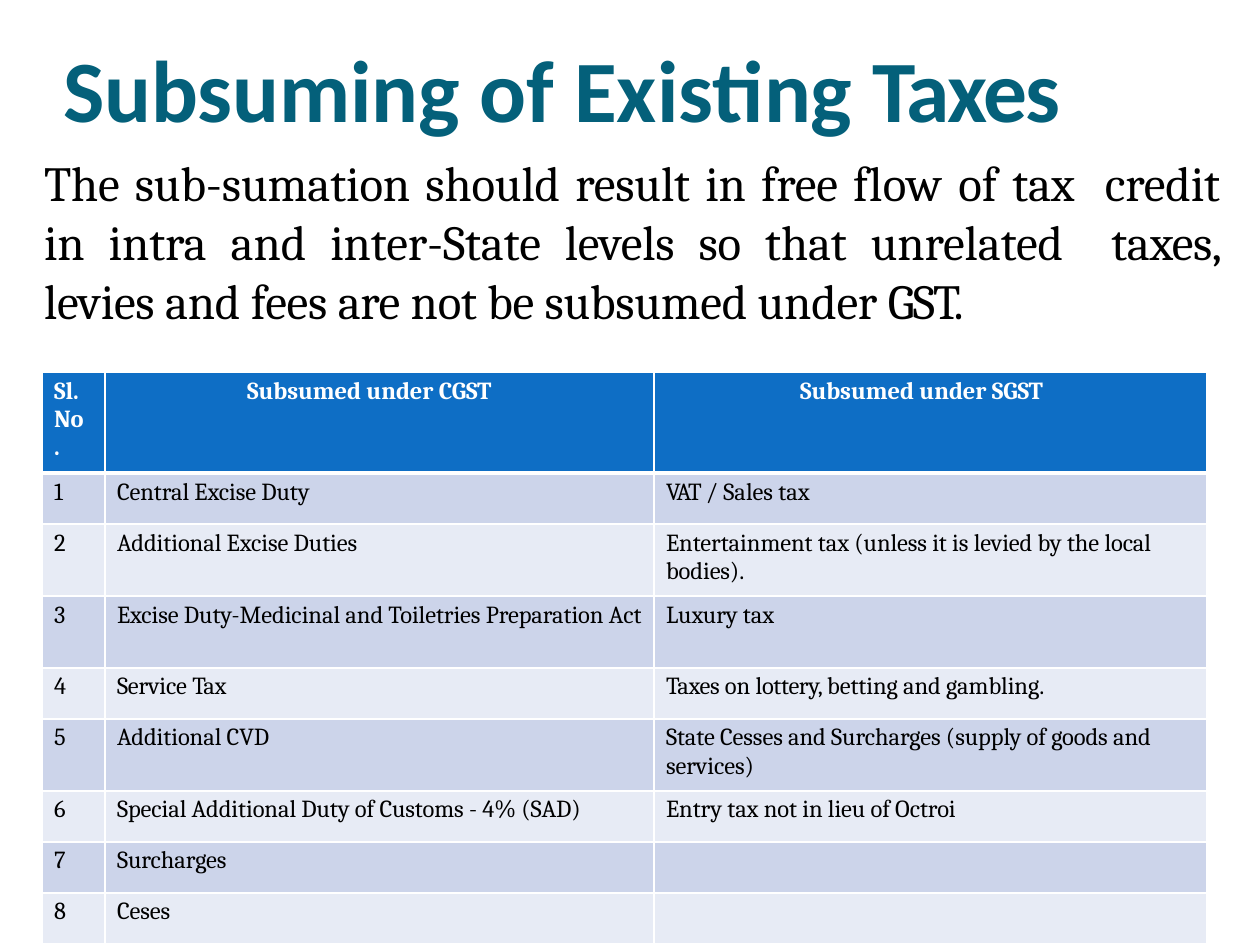
from pptx import Presentation, util as u
from pptx.dml.color import RGBColor
from pptx.enum import text
from pptx.oxml import parse_xml
from pptx.oxml.ns import nsdecls

WHITE, BLACK, TEAL, BLUE = "FFFFFF", "000000", "04607A", "0E6EC5"
BANDS = ["CCD4EA", "E7EBF5"]
TITLE = {"size": u.Pt(50), "name": "Calibri", "bold": True}
BODY = {"size": u.Pt(28), "name": "Cambria", "bold": False}
HEAD = {"size": u.Pt(14), "name": "Cambria", "bold": True}
CELL = {**HEAD, "bold": False}

COLUMNS = [63, 549, 553]
HEIGHTS = [101, 51, 72, 72, 51, 72, 51, 51, 51]
HEADERS = [["Sl. No", "."], ["Subsumed under CGST"], ["Subsumed under SGST"]]
HEADER_INDENTS = [12, 142, 146]
TAXES = [
    ("Central Excise Duty", [("VAT ", -70), ("/ Sales tax", 0)]),
    ("Additional Excise Duties",
     "Entertainment tax (unless it is levied by the local bodies)."),
    ("Excise Duty-Medicinal and Toiletries Preparation Act", "Luxury tax"),
    ([("Service ", -10), ("Tax", -30)],
     [("Taxes ", -20), ("on ", 0), ("lottery, ", -20), ("betting and gambling.", -5)]),
    ("Additional CVD", "State Cesses and Surcharges (supply of goods and services)"),
    ("Special Additional Duty of Customs - 4% (SAD)", "Entry tax not in lieu of Octroi"),
    ("Surcharges", ""),
    ("Ceses", ""),
]
HEADING = [("Subsuming of Existing ", -5), ("Taxes", -110)]
SUMMARY = [
    ("The sub-sumation should result in free ", -5), ("flow ", 30),
    ("of tax  credit in intra and inter-State levels so that unrelated  ", -5),
    ("taxes, ", -20), ("levies and fees ", -10), ("are ", -20),
    ("not be subsumed under ", -10), ("GST.", -70),
]


def px(n):
    return round(n * 914400 / 126)


def rgb(value):
    return RGBColor.from_string(value)


def apply(target, values):
    for name, value in values.items():
        setattr(target, name, value)


class Deck:
    """Holds the style and the current slide, and adds each kind of element."""

    def __init__(self, width, height):
        self.prs = Presentation()
        apply(self.prs, {"slide_width": px(width), "slide_height": px(height)})
        self.s = self.prs.slides.add_slide(self.prs.slide_layouts[6])

    def paragraph(self, p, runs, font, color, indent=0, **layout):
        apply(p, layout)
        p._p.get_or_add_pPr().set("marL", str(px(indent)))
        for words, spacing in [(runs, -5)] if isinstance(runs, str) else runs:
            r = p.add_run()
            r.text = words
            apply(r.font, font)
            r.font.color.rgb = rgb(color)
            r._r.get_or_add_rPr().set("spc", str(spacing))

    def textbox(self, x, y, w, h, inset_top):
        tf = self.s.shapes.add_textbox(*map(px, (x, y, w, h))).text_frame
        apply(tf, {"word_wrap": True, "margin_left": 0, "margin_right": 0,
                   "margin_top": px(inset_top), "margin_bottom": 0,
                   "vertical_anchor": text.MSO_ANCHOR.TOP})
        return tf

    def table(self, x, y, columns, heights):
        table = self.s.shapes.add_table(
            len(heights), len(columns), px(x), px(y), px(sum(columns)), px(sum(heights))).table
        for column, width in zip(table.columns, columns):
            column.width = px(width)
        for row, height in zip(table.rows, heights):
            row.height = px(height)
        return table

    def cell(self, cell, paragraphs, font, color, fill, indent, top=1, bottom=1):
        apply(cell, {"margin_left": 0, "margin_right": 0,
                     "margin_top": px(5), "margin_bottom": 0})
        tcPr = cell._tc.get_or_add_tcPr()
        for side, width in zip("LRTB", (1, 1, top, bottom)):
            tcPr.append(parse_xml(
                f'<a:ln{side} {nsdecls("a")} w="{u.Pt(width)}"><a:solidFill>'
                f'<a:srgbClr val="{WHITE}"/></a:solidFill></a:ln{side}>'))
        cell.fill.solid()
        cell.fill.fore_color.rgb = rgb(fill)
        tf = cell.text_frame
        for i, runs in enumerate(paragraphs):
            p = tf.add_paragraph() if i else tf.paragraphs[0]
            if runs:
                self.paragraph(p, runs, font, color, indent)


def main():
    deck = Deck(1260, 945)
    tf = deck.textbox(43, 8, 1177, 321, 27)
    justify = text.PP_ALIGN.JUSTIFY
    deck.paragraph(tf.paragraphs[0], HEADING, TITLE, TEAL, 20, alignment=justify)
    deck.paragraph(tf.add_paragraph(), SUMMARY, BODY, BLACK, 1,
                   alignment=justify, space_before=u.Pt(7.3))

    table = deck.table(42, 372, COLUMNS, HEIGHTS)
    for col, (header, indent) in enumerate(zip(HEADERS, HEADER_INDENTS)):
        deck.cell(table.cell(0, col), header, HEAD, WHITE, BLUE, indent, bottom=3)
    for row, taxes in enumerate(TAXES, 1):
        for col, words in enumerate((str(row), *taxes)):
            deck.cell(table.cell(row, col), [words], CELL, BLACK, BANDS[(row - 1) % 2],
                      12, top=3 if row == 1 else 1)
    deck.prs.save("out.pptx")


if __name__ == "__main__":
    main()
